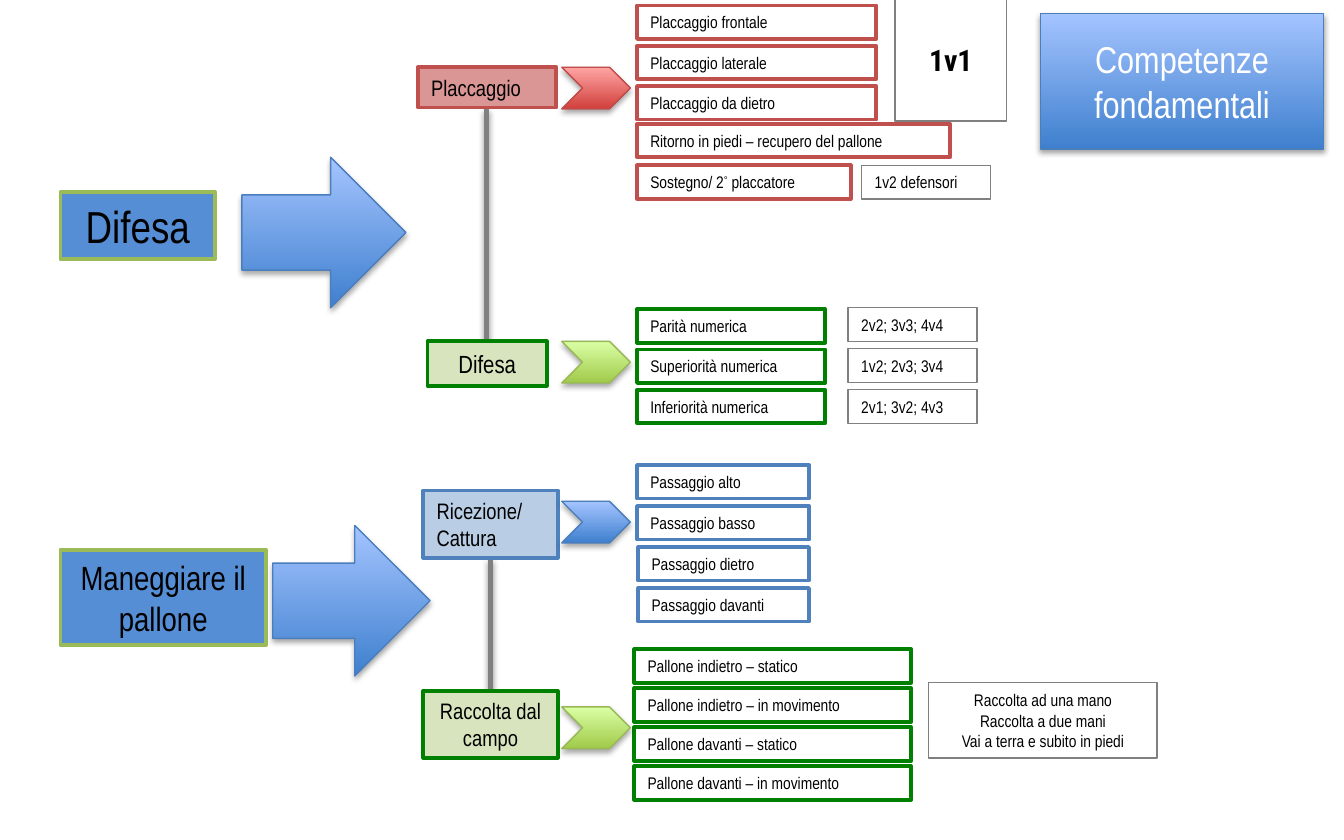
from lxml import etree
from pptx import Presentation
from pptx.dml.color import RGBColor
from pptx.enum import shapes, text
from pptx.oxml import parse_xml
from pptx.oxml.ns import nsdecls, qn
from pptx.util import Inches, Pt

NARROW = "Arial Narrow"
RED, GREEN, BLUE, GRAY, OLIVE = "C0504D", "008000", "4F81BD", "808080", "9BBB59"
# Each gradient theme: bottom colour, top colour, outline
BLUE_GLOSS = ("3F80CE", "A4C4FF", "4B7EBC")
RED_GLOSS = ("D1403C", "FFA6A5", "BF4C48")
GREEN_GLOSS = ("A0CA4A", "DAFFA5", "98B955")
SHAPE, ALIGN = shapes.MSO_SHAPE, text.PP_ALIGN
ROW_H = 0.25


def rgb(value):
    return RGBColor.from_string(value)


def add_shadow(sp, alpha, dist):
    """Give a shape or connector a soft shadow straight below it."""
    sp._element.spPr.append(parse_xml(
        f'<a:effectLst {nsdecls("a")}><a:outerShdw blurRad="{Pt(3.1)}" '
        f'dist="{Pt(dist)}" dir="5400000" rotWithShape="0">'
        f'<a:srgbClr val="000000"><a:alpha val="{alpha}000"/></a:srgbClr>'
        '</a:outerShdw></a:effectLst>'))


def set_line(sp, color, width):
    sp.line.color.rgb = rgb(color)
    sp.line.width = Pt(width)


def gloss(sp, theme):
    bottom, top, outline = theme
    sp.fill.gradient()
    sp.fill.gradient_angle = 90
    for stop, color in zip(sp.fill.gradient_stops, (bottom, top)):
        stop.color.rgb = rgb(color)
    set_line(sp, outline, 0.75)
    add_shadow(sp, 35, 1.8)


def write(sp, content, size, color="000000", font=NARROW, bold=False, align=ALIGN.CENTER):
    """Write lines of text; a degree sign is raised as superscript."""
    tf = sp.text_frame
    tf.word_wrap = True
    tf.auto_size = text.MSO_AUTO_SIZE.NONE
    tf.vertical_anchor = text.MSO_ANCHOR.MIDDLE
    for i, line in enumerate(content.split("\n")):
        p = tf.add_paragraph() if i else tf.paragraphs[0]
        p.alignment = align
        for part in filter(None, line.partition("°")):
            r = p.add_run()
            r.text = part
            r.font.name, r.font.size, r.font.bold = font, Pt(size), bold
            r.font.color.rgb = rgb(color)
            if part == "°":
                r.font._element.set("baseline", "30000")


def add_box(s, at, content, size, line, fill=None, width=2, **style):
    sp = s.shapes.add_shape(SHAPE.RECTANGLE, *map(Inches, at))
    sp.shadow.inherit = False
    if fill:
        sp.fill.solid()
        sp.fill.fore_color.rgb = rgb(fill)
    else:
        sp.fill.background()
    set_line(sp, line, width)
    write(sp, content, size, **style)


def add_item(s, left, top, width, content, line):
    add_box(s, (left, top, width, ROW_H), content, 9, line, "FFFFFF", align=ALIGN.LEFT)


def add_note(s, left, top, width, content):
    add_box(s, (left, top, width, ROW_H), content, 9, GRAY, width=0.75, align=ALIGN.LEFT)


def add_arrow(s, kind, at, theme):
    sp = s.shapes.add_shape(kind, *map(Inches, at))
    gloss(sp, theme)


def add_link(s, x, top, bottom):
    cx = s.shapes.add_connector(shapes.MSO_CONNECTOR.STRAIGHT,
                                *map(Inches, (x, top, x, bottom)))
    set_line(cx, GRAY, 3)
    add_shadow(cx, 38, 1.6)


def set_title(s, at, content):
    sp = s.shapes.title
    sp.left, sp.top, sp.width, sp.height = map(Inches, at)
    geom = etree.Element(qn("a:prstGeom"), prst="roundRect")
    etree.SubElement(geom, qn("a:avLst"))
    sp._element.spPr.insert(1, geom)
    gloss(sp, BLUE_GLOSS)
    write(sp, content, 20, "FFFFFF")


def add_tackle(s):
    add_box(s, (3.11, 0.5, 1.03, 0.3), "Placcaggio", 12, RED, "D99694", align=ALIGN.LEFT)
    for top, width, content in (
            (0.04, 1.78, "Placcaggio frontale"),
            (0.34, 1.78, "Placcaggio laterale"),
            (0.64, 1.78, "Placcaggio da dietro"),
            (0.92, 2.33, "Ritorno in piedi – recupero del pallone"),
            (1.23, 1.59, "Sostegno/ 2° placcatore")):
        add_item(s, 4.74, top, width, content, RED)
    add_note(s, 6.41, 1.23, 0.96, "1v2 defensori")
    add_box(s, (6.66, -0.01, 0.83, 0.91), "1v1", 16, GRAY, width=0.75,
            font="Roboto Condensed", bold=True)


def add_defence(s):
    add_box(s, (3.18, 2.54, 0.89, 0.33), "Difesa", 13.3, GREEN, "D7E4BD")
    rows = (("Parità numerica", "2v2; 3v3; 4v4"),
            ("Superiorità numerica", "1v2; 2v3; 3v4"),
            ("Inferiorità numerica", "2v1; 3v2; 4v3"))
    for i, (content, note) in enumerate(rows):
        add_item(s, 4.74, 2.3 + 0.3 * i, 1.4, content, GREEN)
        add_note(s, 6.31, 2.29 + 0.305 * i, 0.96, note)


def add_catching(s):
    add_box(s, (3.15, 3.65, 1, 0.5), "Ricezione/Cattura", 12, BLUE, "B9CDE5",
            align=ALIGN.LEFT)
    for i, way in enumerate(("alto", "basso", "dietro", "davanti")):
        left = 4.74 if i < 2 else 4.75
        add_item(s, left, 3.46 + 0.305 * i, 6.02 - left, f"Passaggio {way}", BLUE)


def add_pickup(s):
    add_box(s, (3.15, 5.14, 1, 0.5), "Raccolta dal campo", 12, GREEN, "D7E4BD")
    for i, ball in enumerate(("indietro – statico", "indietro – in movimento",
                              "davanti – statico", "davanti – in movimento")):
        add_item(s, 4.72, 4.83 + 0.29 * i, 2.06, f"Pallone {ball}", GREEN)
    add_box(s, (6.91, 5.08, 1.7, 0.56),
            "Raccolta ad una mano\nRaccolta a due mani\nVai a terra e subito in piedi",
            9, GRAY, width=0.75)


def main():
    prs = Presentation()
    prs.slide_width, prs.slide_height = Inches(10), Inches(6.25)
    s = prs.slides.add_slide(prs.slide_layouts[5])
    set_title(s, (7.74, 0.1, 2.11, 1.01), "Competenze\nfondamentali".replace("\n", " "))
    add_link(s, 3.62, 0.81, 2.54)
    add_link(s, 3.65, 4.16, 5.14)
    add_box(s, (0.45, 1.43, 1.15, 0.5), "Difesa", 24, OLIVE, "558ED5")
    add_box(s, (0.45, 4.09, 1.53, 0.71), "Maneggiare il pallone", 18, OLIVE, "558ED5")
    add_tackle(s)
    add_defence(s)
    add_catching(s)
    add_pickup(s)
    add_arrow(s, SHAPE.RIGHT_ARROW, (1.8, 1.17, 1.22, 1.12), BLUE_GLOSS)
    add_arrow(s, SHAPE.RIGHT_ARROW, (2.03, 3.91, 1.17, 1.12), BLUE_GLOSS)
    for top, theme in ((0.5, RED_GLOSS), (2.54, GREEN_GLOSS),
                       (3.73, BLUE_GLOSS), (5.26, GREEN_GLOSS)):
        add_arrow(s, SHAPE.CHEVRON, (4.18, top, 0.51, 0.31), theme)
    prs.save("out.pptx")


if __name__ == "__main__":
    main()
